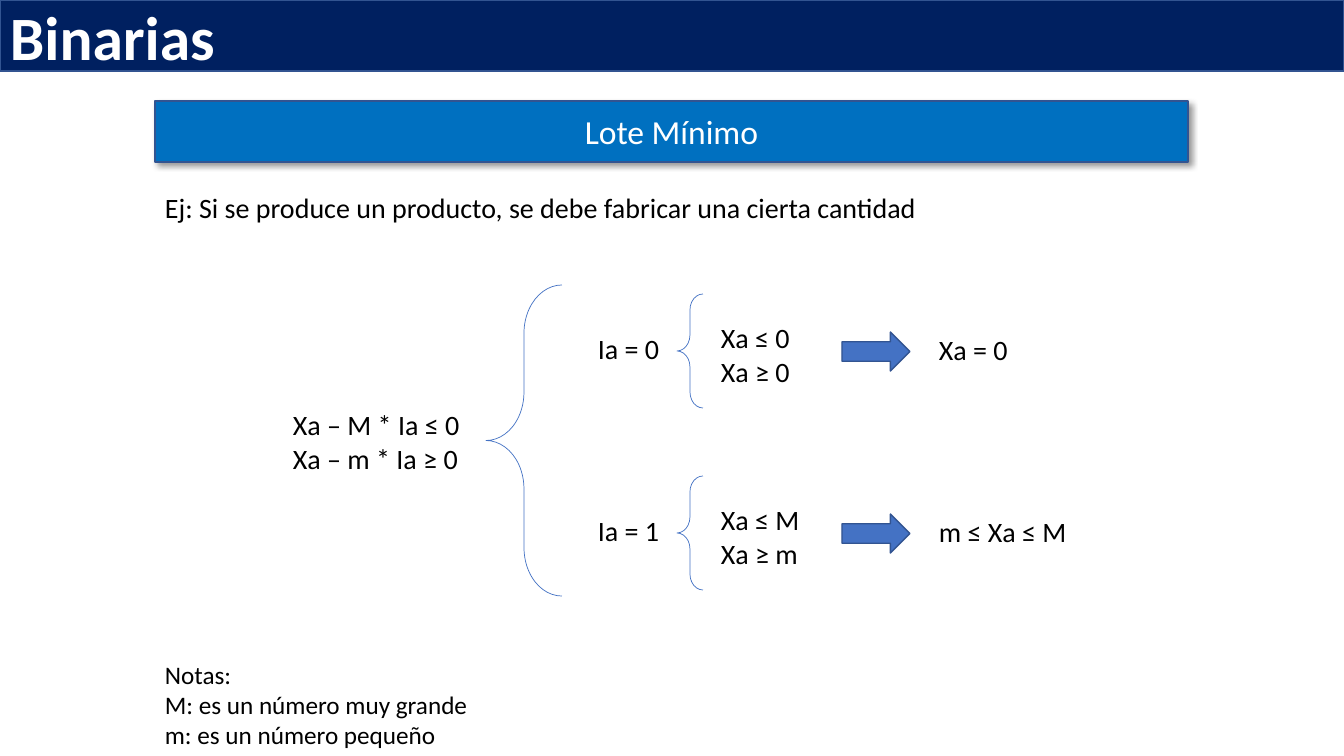
import pptx
import pptx.util
import pptx.oxml
import pptx.oxml.ns
import pptx.dml.color
import pptx.enum.shapes
import pptx.enum.text

PX = 914400 / 100.8
COLORS = {"navy": "002060", "banner": "0070C0", "edge": "325491",
          "accent": "4472C4", "white": "FFFFFF", "black": "000000"}
RGB = {name: pptx.dml.color.RGBColor.from_string(code) for name, code in COLORS.items()}
PRESET = pptx.enum.shapes.MSO_SHAPE
ANCHOR = pptx.enum.text.MSO_ANCHOR
ALIGN = pptx.enum.text.PP_ALIGN

deck = pptx.Presentation()
deck.slide_width = round(1344 * PX)
deck.slide_height = round(756 * PX)
page = deck.slides.add_slide(deck.slide_layouts[6])


def add_preset(preset, place, fill, line, width):
    shape = page.shapes.add_shape(preset, *[round(v * PX) for v in place])
    shape.shadow.inherit = False
    if fill:
        shape.fill.solid()
        shape.fill.fore_color.rgb = RGB[fill]
    else:
        shape.fill.background()
    shape.line.color.rgb = RGB[line]
    shape.line.width = pptx.util.Pt(width)
    return shape


def write(lines, place=None, shape=None, size=20, color="black",
          bold=False, align=ALIGN.LEFT, anchor=ANCHOR.MIDDLE):
    box = shape or page.shapes.add_textbox(*[round(v * PX) for v in place])
    frame = box.text_frame
    frame.word_wrap = True
    frame.vertical_anchor = anchor
    frame.text = "\n".join(lines)
    for para in frame.paragraphs:
        para.alignment = align
        para.font.name = "Calibri"
        para.font.size = pptx.util.Pt(size)
        para.font.bold = bold
        para.font.color.rgb = RGB[color]


# Title bar
title_bar = add_preset(PRESET.RECTANGLE, (0, 0, 1344, 71), "navy", "edge", 1)
write(["Binarias"], shape=title_bar, size=44, color="white", bold=True)

# Topic banner with a soft shadow
banner = add_preset(PRESET.RECTANGLE, (155, 101, 1033, 61), "banner", "edge", 1)
write(["Lote Mínimo"], shape=banner, size=24, color="white", align=ALIGN.CENTER)
effects = banner._element.spPr.find(pptx.oxml.ns.qn("a:effectLst"))
effects.append(pptx.oxml.parse_xml(
    f'<a:outerShdw {pptx.oxml.ns.nsdecls("a")} blurRad="50800" dist="38100" '
    'dir="2700000" algn="tl" rotWithShape="0"><a:srgbClr val="000000">'
    '<a:alpha val="40000"/></a:srgbClr></a:outerShdw>'))

# Example and notes
write(["Ej: Si se produce un producto, se debe fabricar una cierta cantidad"],
      (155, 186, 774, 44), anchor=ANCHOR.TOP)
write(["Notas:", "M: es un número muy grande", "m: es un número pequeño"],
      (155, 654, 686, 102), size=18, anchor=ANCHOR.TOP)

# Constraints and the brace that opens the two cases
write(["Xa – M * Ia ≤ 0", "Xa – m * Ia ≥ 0"], (283, 406, 212, 71))
main_brace = add_preset(PRESET.LEFT_BRACE, (486, 285, 76, 311), None, "accent", 0.5)
main_brace.adjustments[0] = 0.637

# One row per case: value, brace, bounds, arrow, result
CASES = [
    ("Ia = 0", ["Xa ≤ 0", "Xa ≥ 0"], "Xa = 0"),
    ("Ia = 1", ["Xa ≤ M", "Xa ≥ m"], "m ≤ Xa ≤ M"),
]
for row, (value, bounds, result) in enumerate(CASES):
    top = 294 + row * 182
    write([value], (588, top + 19, 103, 71))
    case_brace = add_preset(PRESET.LEFT_BRACE, (677, top, 26, 114), None, "accent", 0.5)
    case_brace.adjustments[0] = 0.616
    write(bounds, (711, top + 22, 109, 78), anchor=ANCHOR.TOP)
    add_preset(PRESET.RIGHT_ARROW, (842, top + 38, 68, 39), "accent", "edge", 1)
    write([result], (929, top + 20, 165, 71))

deck.save("out.pptx")
